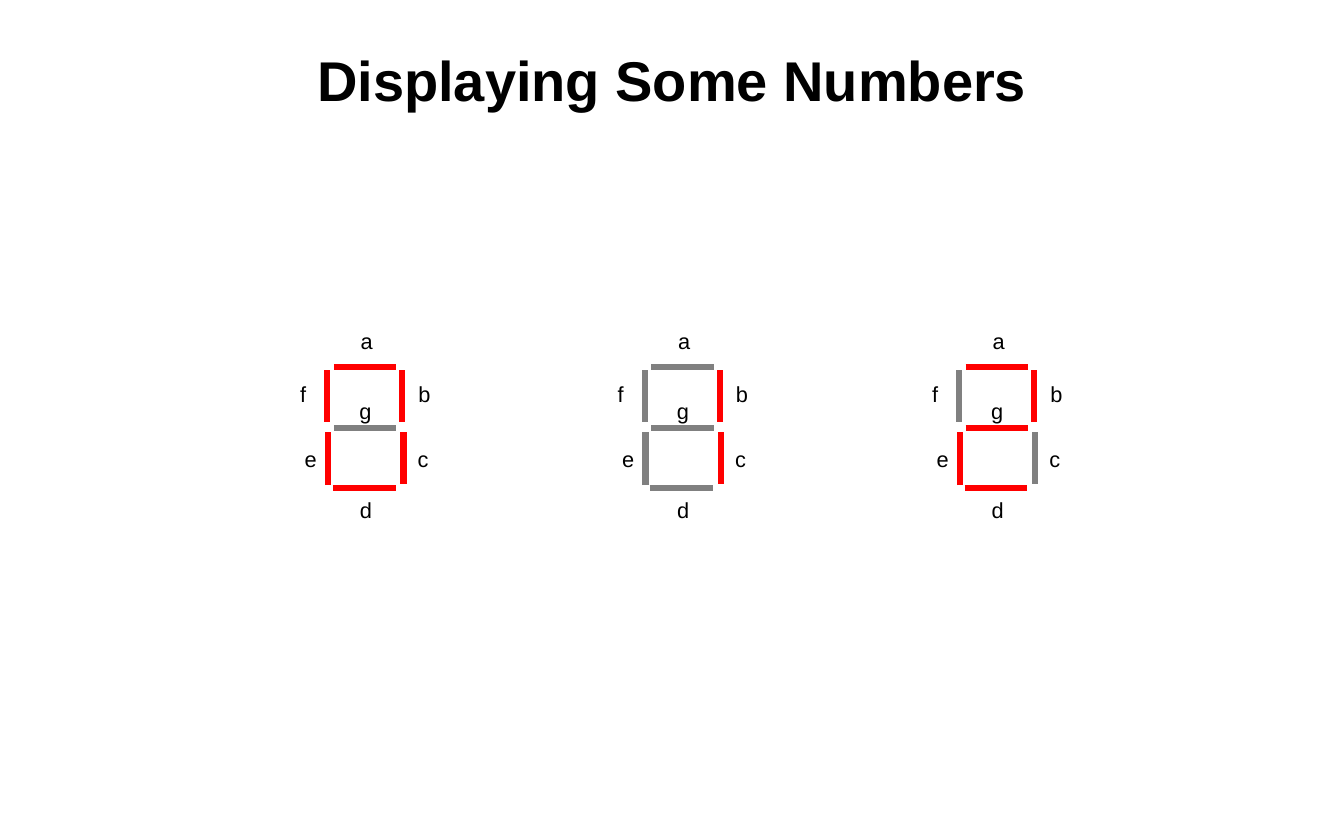
from lxml import etree
from pptx import Presentation
from pptx.dml.color import RGBColor
from pptx.enum import shapes, text
from pptx.oxml import ns
from pptx.util import Cm, Pt

# Content: lit segments of each digit, with its left edge in cm
TITLE = "Displaying Some Numbers"
DIGITS = [("abcdef", 7.42), ("bc", 14.62), ("abdeg", 21.75)]
TOP = 8.33

# Segment ends, relative to the digit's top left corner, in cm
BARS = {
    "a": (0.15, 0, 1.57, 0),
    "d": (0.13, 2.74, 1.55, 2.74),
    "g": (0.15, 1.37, 1.57, 1.37),
    "b": (1.7, 1.24, 1.7, 0.05),
    "c": (1.73, 2.64, 1.73, 1.47),
    "f": (0, 1.24, 0, 0.05),
    "e": (0.02, 2.67, 0.02, 1.47),
}
# Label left, top and width, relative to the same corner
LABELS = {
    "a": (0.51, -1.02, 0.79),
    "b": (1.82, 0.18, 0.79),
    "c": (1.8, 1.65, 0.76),
    "d": (0.49, 2.82, 0.79),
    "e": (-0.76, 1.65, 0.79),
    "f": (-0.86, 0.18, 0.66),
    "g": (0.48, 0.56, 0.79),
}
HIGH = 0.86

FACE = "Arial"
BLACK = RGBColor(0, 0, 0)
RED = RGBColor(255, 0, 0)
GRAY = RGBColor(128, 128, 128)


def style(par, size, bold=False):
    font = par.font
    font.name, font.size, font.bold = FACE, Pt(size), bold
    font.color.rgb = BLACK


def add_bar(group, ends, left, color):
    x1, y1, x2, y2 = ends
    bar = group.shapes.add_connector(
        shapes.MSO_CONNECTOR.STRAIGHT,
        Cm(left + x1), Cm(TOP + y1), Cm(left + x2), Cm(TOP + y2))
    bar.line.color.rgb = color
    bar.line.width = Pt(4)
    etree.SubElement(bar._element.spPr, ns.qn("a:effectLst"))


def add_label(group, name, place, left):
    x, y, wide = place
    box = group.shapes.add_textbox(Cm(left + x), Cm(TOP + y), Cm(wide), Cm(HIGH))
    frame = box.text_frame
    frame.word_wrap = name == "g"
    frame.auto_size = text.MSO_AUTO_SIZE.SHAPE_TO_FIT_TEXT
    frame.text = name
    style(frame.paragraphs[0], 14)


def main():
    deck = Presentation()
    deck.slide_width, deck.slide_height = Cm(30.48), Cm(19.05)
    slide = deck.slides.add_slide(deck.slide_layouts[5])

    # Title
    title = slide.shapes.title
    title.left, title.top = Cm(0), Cm(0.84)
    title.width, title.height = deck.slide_width, Cm(1.9)
    frame = title.text_frame
    frame.text = TITLE
    frame.vertical_anchor = text.MSO_ANCHOR.MIDDLE
    frame.paragraphs[0].alignment = text.PP_ALIGN.CENTER
    style(frame.paragraphs[0], 36, True)

    # Seven-segment digits
    for lit, left in DIGITS:
        group = slide.shapes.add_group_shape()
        for name, ends in BARS.items():
            add_bar(group, ends, left, RED if name in lit else GRAY)
        for name, place in LABELS.items():
            add_label(group, name, place, left)

    deck.save("out.pptx")


if __name__ == "__main__":
    main()
